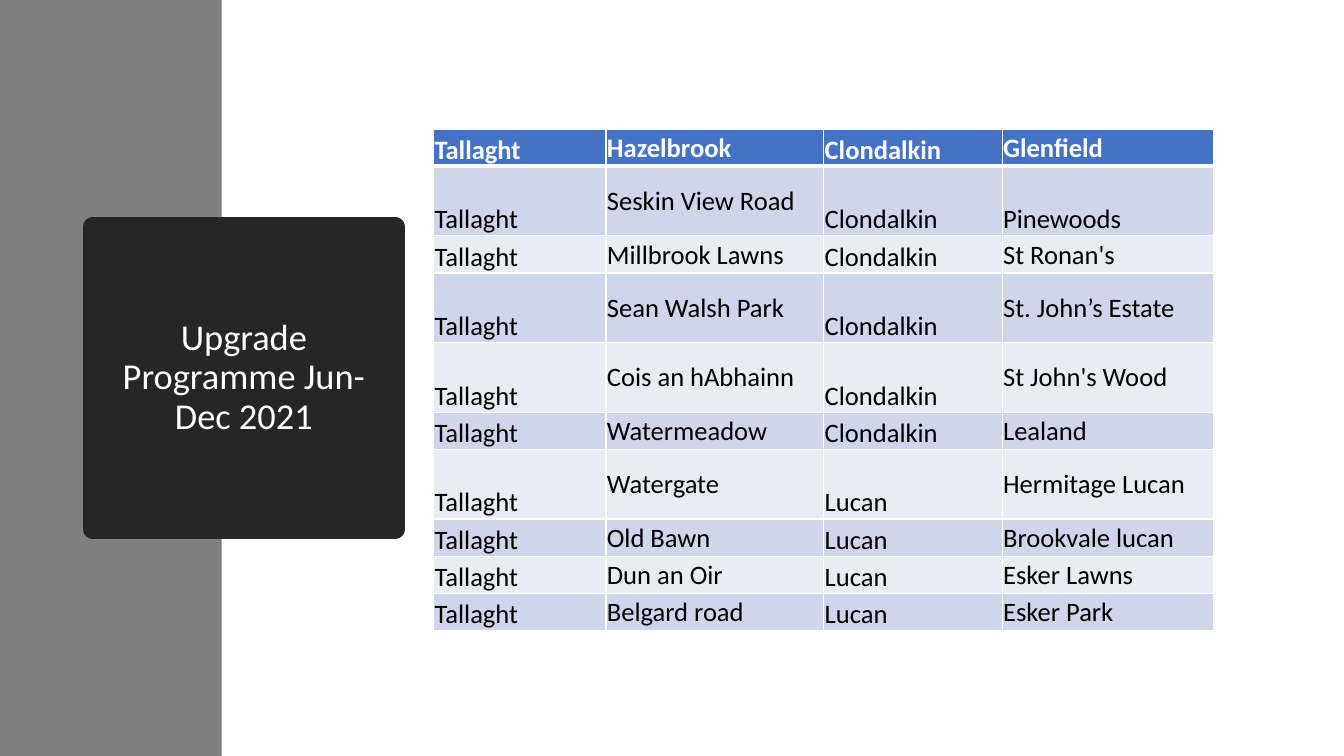
from dataclasses import dataclass

from lxml import etree
from pptx import Presentation
from pptx.dml.color import RGBColor
from pptx.enum import shapes, text
from pptx.oxml import ns
from pptx.util import Inches, Pt


@dataclass(frozen=True)
class Theme:
    font: str = "Calibri"
    title_size: float = 26
    cell_size: float = 19
    white: str = "FFFFFF"
    black: str = "000000"
    band: str = "7F7F7F"
    panel: str = "262626"
    header: str = "4472C4"
    odd_row: str = "CFD5EA"
    even_row: str = "E9EBF5"


theme = Theme()


def write(frame, words, size, color, bold=False, align=text.PP_ALIGN.LEFT, spacing=1.0):
    """Put one formatted paragraph in a text frame."""
    para = frame.paragraphs[0]
    para.alignment = align
    para.line_spacing = spacing
    span = para.add_run()
    span.text = words
    span.font.name = theme.font
    span.font.size = Pt(size)
    span.font.bold = bold
    span.font.color.rgb = RGBColor.from_string(color)


def paint(fill, color):
    """Give a solid colour to a fill."""
    fill.solid()
    fill.fore_color.rgb = RGBColor.from_string(color)


deck = Presentation()
deck.slide_width = Inches(13.33)
deck.slide_height = Inches(7.5)
page = deck.slides.add_slide(deck.slide_layouts[5])

# Grey band down the left side, behind the title
band = page.shapes.add_shape(
    shapes.MSO_SHAPE.RECTANGLE, 0, 0, Inches(2.2), deck.slide_height)
band.shadow.inherit = False
paint(band.fill, theme.band)
band.line.fill.background()
title = page.shapes.title
title._element.addprevious(band._element)

# Dark title panel; its thick line has rounded corners
title.left, title.top = Inches(0.92), Inches(2.25)
title.width = title.height = Inches(3)
paint(title.fill, theme.panel)
paint(title.line.fill, theme.panel)
title.line.width = Pt(13.75)
etree.SubElement(title.line._get_or_add_ln(), ns.qn("a:round"))
title.text_frame.word_wrap = True
title.text_frame.auto_size = text.MSO_AUTO_SIZE.NONE
title.text_frame.vertical_anchor = text.MSO_ANCHOR.MIDDLE
write(title.text_frame, "Upgrade Programme Jun-Dec 2021", theme.title_size,
      theme.white, align=text.PP_ALIGN.CENTER, spacing=0.9)

# Table contents and sizes
places = [
    ("Tallaght", "Hazelbrook", "Clondalkin", "Glenfield"),
    ("Tallaght", "Seskin View Road", "Clondalkin", "Pinewoods"),
    ("Tallaght", "Millbrook Lawns", "Clondalkin", "St Ronan's"),
    ("Tallaght", "Sean Walsh Park", "Clondalkin", "St. John’s Estate"),
    ("Tallaght", "Cois an hAbhainn", "Clondalkin", "St John's Wood"),
    ("Tallaght", "Watermeadow", "Clondalkin", "Lealand"),
    ("Tallaght", "Watergate", "Lucan", "Hermitage Lucan"),
    ("Tallaght", "Old Bawn", "Lucan", "Brookvale lucan"),
    ("Tallaght", "Dun an Oir", "Lucan", "Esker Lawns"),
    ("Tallaght", "Belgard road", "Lucan", "Esker Park"),
]
column_widths = (1.71, 2.16, 1.77, 2.1)
tall_rows = (1, 3, 4, 6)

table = page.shapes.add_table(
    len(places), len(column_widths), Inches(4.3), Inches(1.28),
    Inches(7.75), Inches(4.95)).table
for column, width in zip(table.columns, column_widths):
    column.width = Inches(width)

# Fill the table row by row
for r, names in enumerate(places):
    is_header = r == 0
    table.rows[r].height = Inches(0.69 if r in tall_rows else 0.37)
    row_color = theme.header if is_header else (theme.even_row, theme.odd_row)[r % 2]
    for c, name in enumerate(names):
        cell = table.cell(r, c)
        cell.margin_left = cell.margin_top = cell.margin_right = Inches(0.01)
        cell.margin_bottom = 0
        at_bottom = c % 2 == 0 or name == "Pinewoods"
        cell.vertical_anchor = text.MSO_ANCHOR.BOTTOM if at_bottom else text.MSO_ANCHOR.MIDDLE
        write(cell.text_frame, name, theme.cell_size,
              theme.white if is_header else theme.black, bold=is_header)

        # White borders, thicker between header and body
        for side in ("L", "R", "T", "B"):
            thick = (is_header and side == "B") or (r == 1 and side == "T")
            border = etree.SubElement(
                cell._tc.get_or_add_tcPr(), ns.qn(f"a:ln{side}"), w=str(Pt(3 if thick else 1)))
            solid = etree.SubElement(border, ns.qn("a:solidFill"))
            etree.SubElement(solid, ns.qn("a:srgbClr"), val=theme.white)
        paint(cell.fill, row_color)

deck.save("out.pptx")
